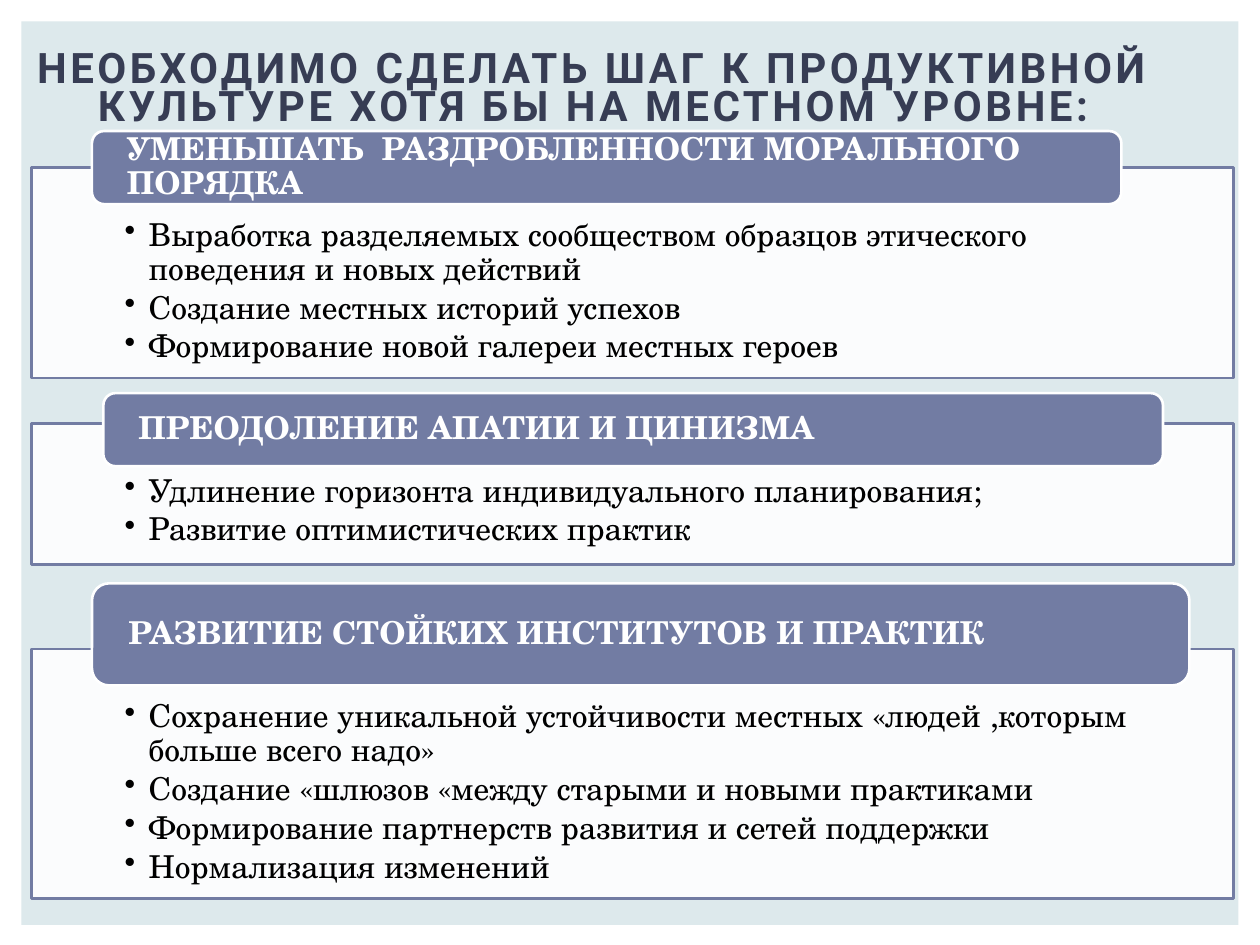
from dataclasses import dataclass

from lxml.etree import SubElement
from pptx import Presentation
from pptx.dml.color import RGBColor
from pptx.enum.shapes import MSO_SHAPE as Preset
from pptx.enum.text import MSO_ANCHOR as Anchor, PP_ALIGN as Align
from pptx.oxml.ns import qn
from pptx.util import Inches, Pt

COLORS = {
    "backdrop": "DDE9EC",
    "title": "373D54",
    "accent": "727CA3",
    "white": "FFFFFF",
    "black": "000000",
}
BODY_FONT = "TeX Gyre Schola"
TITLE_FONT = "Roboto"

# The slide is a grid of 100 columns by 100 rows
SLIDE_WIDTH, SLIDE_HEIGHT = Inches(10), Inches(7.5)
COLUMN, ROW = SLIDE_WIDTH / 100, SLIDE_HEIGHT / 100


@dataclass(frozen=True)
class Area:
    left: float
    top: float
    width: float
    height: float

    def lengths(self) -> tuple[int, int, int, int]:
        return (round(self.left * COLUMN), round(self.top * ROW),
                round(self.width * COLUMN), round(self.height * ROW))


@dataclass(frozen=True)
class Section:
    heading: str
    heading_area: Area
    panel_top: float
    panel_height: float
    points: tuple[str, ...]


SECTIONS = (
    Section(
        "УМЕНЬШАТЬ  РАЗДРОБЛЕННОСТИ МОРАЛЬНОГО ПОРЯДКА",
        Area(7.3, 13.87, 81.7, 7.73), 17.73, 22.27,
        ("Выработка разделяемых сообществом образцов этического поведения и новых действий",
         "Создание местных историй успехов",
         "Формирование новой галереи местных героев"),
    ),
    Section(
        "ПРЕОДОЛЕНИЕ АПАТИИ И ЦИНИЗМА",
        Area(8.2, 41.6, 84.1, 7.73), 44.8, 14.93,
        ("Удлинение горизонта индивидуального планирования;",
         "Развитие оптимистических практик"),
    ),
    Section(
        "РАЗВИТИЕ СТОЙКИХ ИНСТИТУТОВ И ПРАКТИК",
        Area(7.3, 61.73, 87.1, 10.8), 68.67, 26.4,
        ("Сохранение уникальной устойчивости местных «людей ,которым больше всего надо»",
         "Создание «шлюзов «между старыми и новыми практиками",
         "Формирование партнерств развития и сетей поддержки",
         "Нормализация изменений"),
    ),
)


def color(name: str) -> RGBColor:
    return RGBColor.from_string(COLORS[name])


def draw_block(slide, preset, area: Area, fill: str, line: str | None = None):
    block = slide.shapes.add_shape(preset, *area.lengths())
    block.shadow.inherit = False
    block.fill.solid()
    block.fill.fore_color.rgb = color(fill)
    if line:
        block.line.color.rgb = color(line)
        block.line.width = Pt(1.5)
    else:
        block.line.fill.background()
    return block


def set_frame(frame, anchor, left=0.1, top=0.05, right=0.1, bottom=0.05) -> None:
    frame.word_wrap = True
    frame.vertical_anchor = anchor
    frame.margin_left, frame.margin_top = Inches(left), Inches(top)
    frame.margin_right, frame.margin_bottom = Inches(right), Inches(bottom)


def style(paragraph, font_name: str, size: int, ink: str, bold=False,
          align=Align.LEFT, spacing=0.9) -> None:
    paragraph.alignment = align
    paragraph.line_spacing = spacing
    for run in paragraph.runs:
        run.font.name = font_name
        run.font.size = Pt(size)
        run.font.bold = bold
        run.font.color.rgb = color(ink)


def add_bullet(paragraph) -> None:
    properties = paragraph._p.get_or_add_pPr()
    properties.set("marL", str(Inches(0.19)))
    properties.set("indent", str(Inches(-0.19)))
    SubElement(properties, qn("a:buChar")).set("char", "•")


def draw_title(slide, text: str) -> None:
    title = slide.shapes.add_textbox(*Area(0, 2.53, 94.2, 18.13).lengths())
    frame = title.text_frame
    set_frame(frame, Anchor.MIDDLE, bottom=0.34)
    frame.text = text
    style(frame.paragraphs[0], TITLE_FONT, 24, "title", True, Align.CENTER, 0.75)
    for run in frame.paragraphs[0].runs:
        run.font._element.set("spc", "200")


def draw_panel(slide, section: Section) -> None:
    area = Area(2.5, section.panel_top, 95.4, section.panel_height)
    panel = draw_block(slide, Preset.RECTANGLE, area, "white", "accent")
    tint = panel.fill._xPr.find(qn("a:solidFill"))[0]
    SubElement(tint, qn("a:alpha")).set("val", "90000")
    frame = panel.text_frame
    set_frame(frame, Anchor.TOP, 0.74, 0.41, 0.74, 0.14)
    frame.text = "\n".join(section.points)
    for point in frame.paragraphs:
        style(point, BODY_FONT, 18, "black")
        point.space_after = Pt(2.7)
        add_bullet(point)


def draw_heading(slide, section: Section) -> None:
    heading = draw_block(slide, Preset.ROUNDED_RECTANGLE, section.heading_area,
                         "accent", "white")
    frame = heading.text_frame
    # The rounded corners already inset the text a little
    set_frame(frame, Anchor.MIDDLE, 0.25, 0, 0.25, 0)
    frame.text = section.heading
    style(frame.paragraphs[0], BODY_FONT, 18, "white", True)


def main() -> None:
    deck = Presentation()
    deck.slide_width, deck.slide_height = SLIDE_WIDTH, SLIDE_HEIGHT
    slide = deck.slides.add_slide(deck.slide_layouts[6])

    # Backdrop and title
    draw_block(slide, Preset.RECTANGLE, Area(1.7, 2.27, 96.6, 95.6), "backdrop")
    draw_title(slide, "НЕОБХОДИМО СДЕЛАТЬ ШАГ К ПРОДУКТИВНОЙ КУЛЬТУРЕ "
                      "ХОТЯ БЫ НА МЕСТНОМ УРОВНЕ:")

    # Panels with their headings on top
    for section in SECTIONS:
        draw_panel(slide, section)
        draw_heading(slide, section)

    deck.save("out.pptx")


if __name__ == "__main__":
    main()
